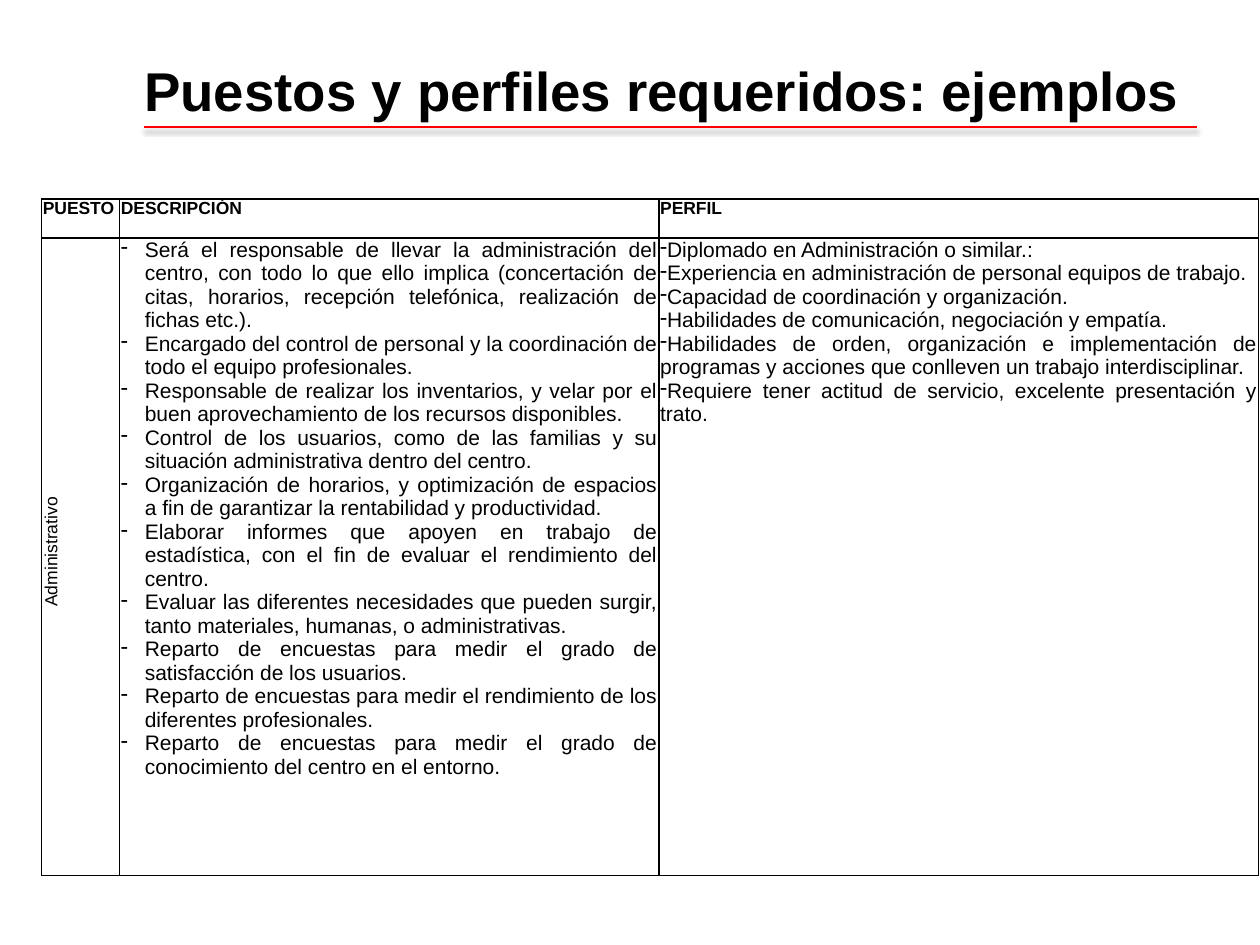
"""Build a slide with a table of job positions and required profiles."""
from dataclasses import dataclass

from lxml import etree
from pptx import Presentation
from pptx.dml.color import RGBColor
from pptx.enum.shapes import MSO_CONNECTOR
from pptx.enum.text import MSO_ANCHOR, MSO_AUTO_SIZE, PP_ALIGN
from pptx.oxml.ns import qn
from pptx.slide import Slide
from pptx.table import _Cell
from pptx.util import Inches, Pt

STRAIGHT = MSO_CONNECTOR.STRAIGHT
MIDDLE = MSO_ANCHOR.MIDDLE
NO_FIT = MSO_AUTO_SIZE.NONE
CENTER, JUSTIFY = PP_ALIGN.CENTER, PP_ALIGN.JUSTIFY


@dataclass(frozen=True)
class Theme:
    """Fonts, colours and type sizes of the slide."""
    font: str = "Arial"
    ink: str = "000000"
    rule: str = "FF0000"
    title: float = 31.2
    label: float = 10
    body: float = 12


@dataclass(frozen=True)
class CellSpec:
    """Content and format of one table cell."""
    lines: tuple[str, ...]
    size: float
    bold: bool = False
    align: PP_ALIGN = JUSTIFY
    after: float = 0
    bullet: str = ""
    margin: float = 0
    indent: float = 0
    tab: float = 0
    direction: str = "horz"


THEME = Theme()
COLUMN_WIDTHS = (0.62, 4.28, 4.76)
ROW_HEIGHTS = (0.31, 5.06)
DUTIES = (
    "Será el responsable de llevar la administración del centro, con todo lo que ello implica "
    "(concertación de citas, horarios, recepción telefónica, realización de fichas etc.).",
    "Encargado del control de personal y la coordinación de todo el equipo profesionales.",
    "Responsable de realizar los inventarios, y velar por el buen aprovechamiento de los "
    "recursos disponibles.",
    "Control de los usuarios, como de las familias y su situación administrativa dentro del centro.",
    "Organización de horarios, y optimización de espacios a fin de garantizar la rentabilidad "
    "y productividad.",
    "Elaborar informes que apoyen en trabajo de estadística, con el fin de evaluar el "
    "rendimiento del centro.",
    "Evaluar las diferentes necesidades que pueden surgir, tanto materiales, humanas, "
    "o administrativas.",
    "Reparto de encuestas para medir el grado de satisfacción de los usuarios.",
    "Reparto de encuestas para medir el rendimiento de los diferentes profesionales.",
    "Reparto de encuestas para medir el grado de conocimiento del centro en el entorno.",
)
REQUIREMENTS = (
    "Diplomado en Administración o similar.:",
    "Experiencia en administración de personal equipos de trabajo.",
    "Capacidad de coordinación y organización.",
    "Habilidades de comunicación, negociación y empatía.",
    "Habilidades de orden, organización e implementación de programas y acciones que "
    "conlleven un trabajo interdisciplinar.",
    "Requiere tener actitud de servicio, excelente presentación y trato.",
)
HEADERS = tuple(
    CellSpec((name,), THEME.label, bold=True, after=6)
    for name in ("PUESTO", "DESCRIPCIÓN", "PERFIL")
)
POSITION = (
    CellSpec(("Administrativo",), THEME.label, align=CENTER, after=6, margin=0.08,
             direction="vert270"),
    CellSpec(DUTIES, THEME.body, bullet="-", margin=0.19, indent=-0.19, tab=0.25),
    CellSpec(REQUIREMENTS, THEME.body, bullet="-"),
)


def add_element(parent, tag: str, **attributes):
    """Append a DrawingML element with the given attributes."""
    values = {name: str(value) for name, value in attributes.items()}
    return etree.SubElement(parent, qn(f"a:{tag}"), values)


def write_span(para, text: str, size: float, bold: bool) -> None:
    """Add a formatted run to a paragraph."""
    span = para.add_run()
    span.text = text
    values = {"name": THEME.font, "size": Pt(size), "bold": bold}
    for name, value in values.items():
        setattr(span.font, name, value)
    span.font.color.rgb = RGBColor.from_string(THEME.ink)


def add_title(slide: Slide, text: str) -> None:
    """Place and format the slide title."""
    box = slide.shapes.title
    placement = {"left": 0.5, "top": 0.25, "width": 9.5, "height": 0.92}
    for name, value in placement.items():
        setattr(box, name, Inches(value))
    frame = box.text_frame
    values = {"word_wrap": True, "auto_size": NO_FIT, "vertical_anchor": MIDDLE}
    for name, value in values.items():
        setattr(frame, name, value)
    para = frame.paragraphs[0]
    para.alignment = CENTER
    write_span(para, text, THEME.title, True)


def add_rule(slide: Slide) -> None:
    """Draw the shadowed line under the title."""
    rule = slide.shapes.add_connector(
        STRAIGHT, Inches(1.14), Inches(1.01), Inches(9.5), Inches(1.01))
    rule.line.color.rgb = RGBColor.from_string(THEME.rule)
    rule.line.width = Pt(1)
    effects = add_element(rule._element.spPr, "effectLst")
    shadow = add_element(effects, "outerShdw", blurRad=Pt(3.1), dist=Pt(1.6),
                         dir=90 * 60000, rotWithShape=0)
    color = add_element(shadow, "srgbClr", val=THEME.ink)
    add_element(color, "alpha", val=38000)


def add_borders(cell: _Cell) -> None:
    """Outline all four sides of a cell."""
    properties = cell._tc.get_or_add_tcPr()
    for side in ("lnL", "lnR", "lnT", "lnB"):
        border = add_element(properties, side, w=Pt(1))
        fill = add_element(border, "solidFill")
        add_element(fill, "srgbClr", val=THEME.ink)


def fill_cell(cell: _Cell, spec: CellSpec) -> None:
    """Write and format one cell."""
    add_borders(cell)
    cell.fill.background()
    margins = {"margin_left": 0.01, "margin_top": 0, "margin_right": 0.01, "margin_bottom": 0}
    for name, value in margins.items():
        setattr(cell, name, Inches(value))
    cell._tc.get_or_add_tcPr().set("vert", spec.direction)
    frame = cell.text_frame
    for index, line in enumerate(spec.lines):
        para = frame.add_paragraph() if index else frame.paragraphs[0]
        properties = para._p.get_or_add_pPr()
        properties.set("marL", str(Inches(spec.margin)))
        properties.set("indent", str(Inches(spec.indent)))
        if spec.bullet:
            add_element(properties, "buChar", char=spec.bullet)
        if spec.tab:
            tabs = add_element(properties, "tabLst")
            add_element(tabs, "tab", pos=Inches(spec.tab), algn="l")
        para.alignment = spec.align
        para.space_after = Pt(spec.after)
        write_span(para, line, spec.size, spec.bold)


def add_positions_table(slide: Slide) -> None:
    """Add the table of positions."""
    rows = (HEADERS, POSITION)
    table = slide.shapes.add_table(
        len(rows), len(HEADERS), Inches(0.33), Inches(1.58),
        Inches(sum(COLUMN_WIDTHS)), Inches(sum(ROW_HEIGHTS))).table
    table.first_row = table.horz_banding = False
    for column, width in zip(table.columns, COLUMN_WIDTHS):
        column.width = Inches(width)
    for row, height, specs in zip(table.rows, ROW_HEIGHTS, rows):
        row.height = Inches(height)
        for cell, spec in zip(row.cells, specs):
            fill_cell(cell, spec)


def main() -> None:
    """Build and save the deck."""
    deck = Presentation()
    deck.slide_width, deck.slide_height = Inches(10), Inches(7.5)
    page = deck.slides.add_slide(deck.slide_layouts[5])
    add_rule(page)
    add_title(page, "Puestos y perfiles requeridos: ejemplos")
    add_positions_table(page)
    deck.save("out.pptx")


if __name__ == "__main__":
    main()
